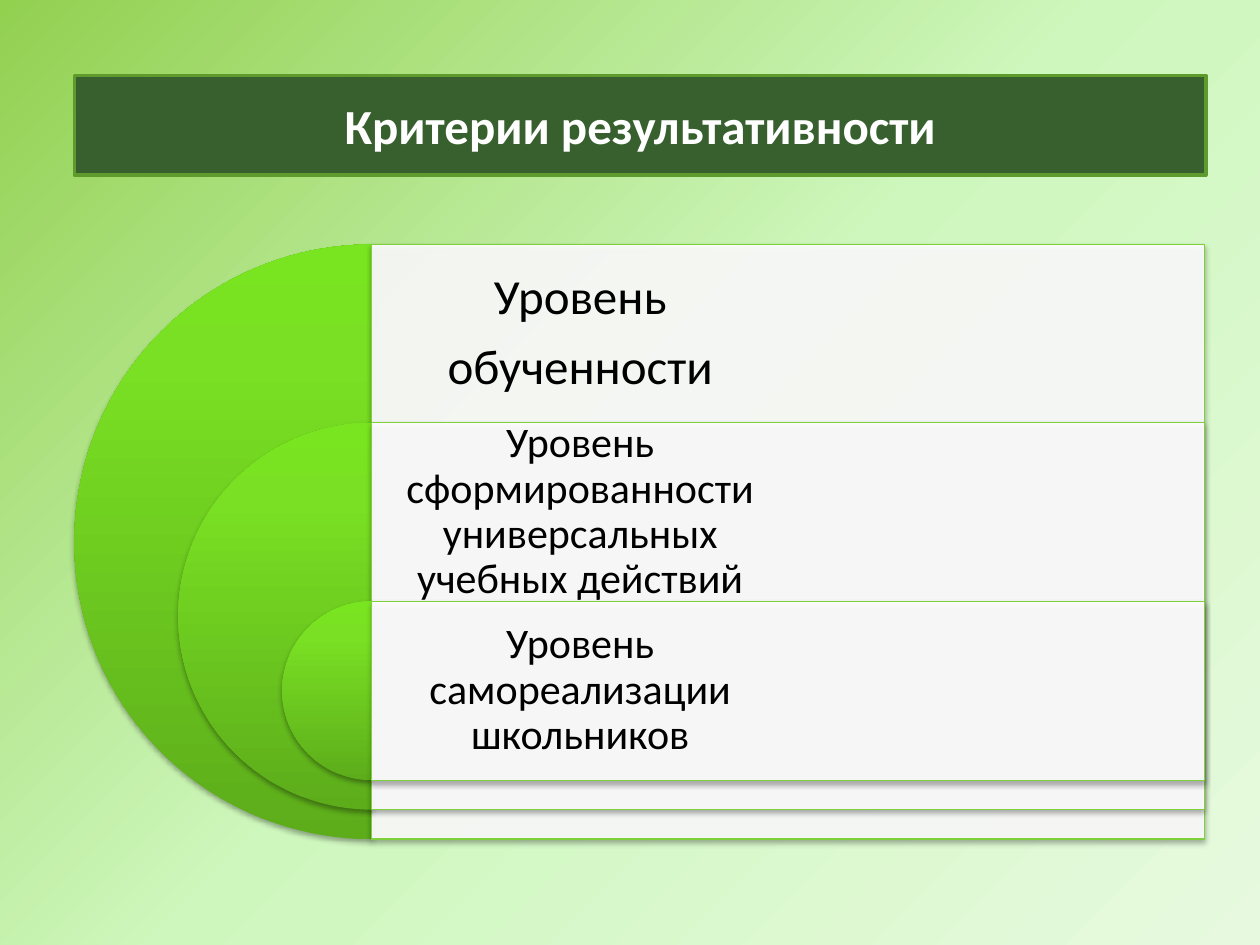
from copy import deepcopy

from lxml.etree import SubElement
from pptx import Presentation
from pptx.dml.color import RGBColor
from pptx.enum.shapes import MSO_SHAPE
from pptx.enum.text import MSO_ANCHOR, PP_ALIGN
from pptx.oxml.ns import qn
from pptx.util import Inches, Pt

TITLE = "Критерии результативности"
# paragraphs, text size, inset
LEVELS = [
    (["Уровень", "обученности"], 28, 0.12),
    (["Уровень сформированности универсальных учебных действий"], 24, 0.1),
    (["Уровень самореализации школьников"], 24, 0.1),
]

WHITE = RGBColor(0xFF, 0xFF, 0xFF)
BLACK = RGBColor(0, 0, 0)
DARK_GREEN = RGBColor(0x38, 0x60, 0x2E)
TITLE_EDGE = RGBColor(0x5E, 0x9B, 0x2C)
PANEL_EDGE = RGBColor(0x7F, 0xD1, 0x3B)
PAGE_STOPS = [(0, RGBColor(0x92, 0xD0, 0x50)), (0.5, RGBColor(0xCE, 0xF7, 0xBD)),
              (1, RGBColor(0xE7, 0xFA, 0xDF))]
PIE_STOPS = [(0, RGBColor(0x5D, 0xAD, 0x1B)), (0.8, RGBColor(0x79, 0xE0, 0x23)),
             (1, RGBColor(0x79, 0xE5, 0x20))]

AXIS, TOP = 2.95, 1.94
PANEL_WIDTH, TEXT_WIDTH = 6.61, 3.31
DIAMETER, SHRINK = 4.72, 1.65
ROW = DIAMETER * 0.3


def fill_gradient(fill, element, stops, angle):
    """Fill with three stops; the angle runs counter-clockwise."""
    fill.gradient()
    fill.gradient_angle = angle
    stop_list = element.find(".//" + qn("a:gsLst"))
    stop_list.append(deepcopy(stop_list[-1]))
    for stop, (position, color) in zip(fill.gradient_stops, stops):
        stop.position = position
        stop.color.rgb = color


def add_shadow(shape):
    shape.shadow.inherit = False
    effects = shape._element.spPr.find(qn("a:effectLst"))
    outer = SubElement(effects, qn("a:outerShdw"), blurRad=str(Pt(3.1)), dist=str(Pt(1.8)),
                       dir="5400000", rotWithShape="0")
    color = SubElement(outer, qn("a:srgbClr"), val="000000")
    SubElement(color, qn("a:alpha"), val="35000")


def add_rectangle(shapes, left, top, width, height, fill, edge, edge_width):
    box = shapes.add_shape(MSO_SHAPE.RECTANGLE, Inches(left), Inches(top),
                           Inches(width), Inches(height))
    box.fill.solid()
    box.fill.fore_color.rgb = fill
    box.line.color.rgb = edge
    box.line.width = Pt(edge_width)
    box.shadow.inherit = False
    return box


def write(box, lines, size, color=BLACK, bold=False, inset=0.1, spacing=None, after=None):
    """Write centred paragraphs; after is the gap below each, in percent of a line."""
    frame = box.text_frame
    frame.word_wrap = True
    frame.vertical_anchor = MSO_ANCHOR.MIDDLE
    frame.margin_left = frame.margin_right = Inches(inset)
    frame.margin_top = frame.margin_bottom = Inches(inset)
    for index, line in enumerate(lines):
        para = frame.add_paragraph() if index else frame.paragraphs[0]
        para.alignment = PP_ALIGN.CENTER
        if spacing:
            para.line_spacing = spacing
        if after:
            gap = SubElement(para._p.get_or_add_pPr(), qn("a:spcAft"))
            SubElement(gap, qn("a:spcPct"), val=str(after * 1000))
        span = para.add_run()
        span.text = line
        span.font.name = "Calibri"
        span.font.size = Pt(size)
        span.font.bold = bold
        span.font.color.rgb = color


def add_level(shapes, index, lines, size, inset):
    top = TOP + index * ROW
    diameter = DIAMETER - index * SHRINK

    pie = shapes.add_shape(MSO_SHAPE.PIE, Inches(AXIS - diameter / 2), Inches(top),
                           Inches(diameter), Inches(diameter))
    pie.adjustments[0], pie.adjustments[1] = 54, 162  # left half
    fill_gradient(pie.fill, pie._element, PIE_STOPS, 90)
    pie.line.fill.background()
    add_shadow(pie)

    panel = add_rectangle(shapes, AXIS, top, PANEL_WIDTH, diameter, WHITE, PANEL_EDGE, 0.75)
    color = panel._element.spPr.find(qn("a:solidFill"))[0]
    SubElement(color, qn("a:alpha"), val="90000")
    add_shadow(panel)

    label = shapes.add_textbox(Inches(AXIS), Inches(top), Inches(TEXT_WIDTH), Inches(ROW))
    write(label, lines, size, inset=inset, spacing=0.9, after=35)


def main():
    deck = Presentation()
    deck.slide_width, deck.slide_height = Inches(10), Inches(7.5)
    page = deck.slides.add_slide(deck.slide_layouts[6])
    fill_gradient(page.background.fill, page._element, PAGE_STOPS, 315)

    title = add_rectangle(page.shapes, 0.59, 0.6, 8.98, 0.79, DARK_GREEN, TITLE_EDGE, 2)
    write(title, [TITLE], 28, color=WHITE, bold=True)

    diagram = page.shapes.add_group_shape()
    for index, level in enumerate(LEVELS):
        add_level(diagram.shapes, index, *level)

    deck.save("out.pptx")


if __name__ == "__main__":
    main()
